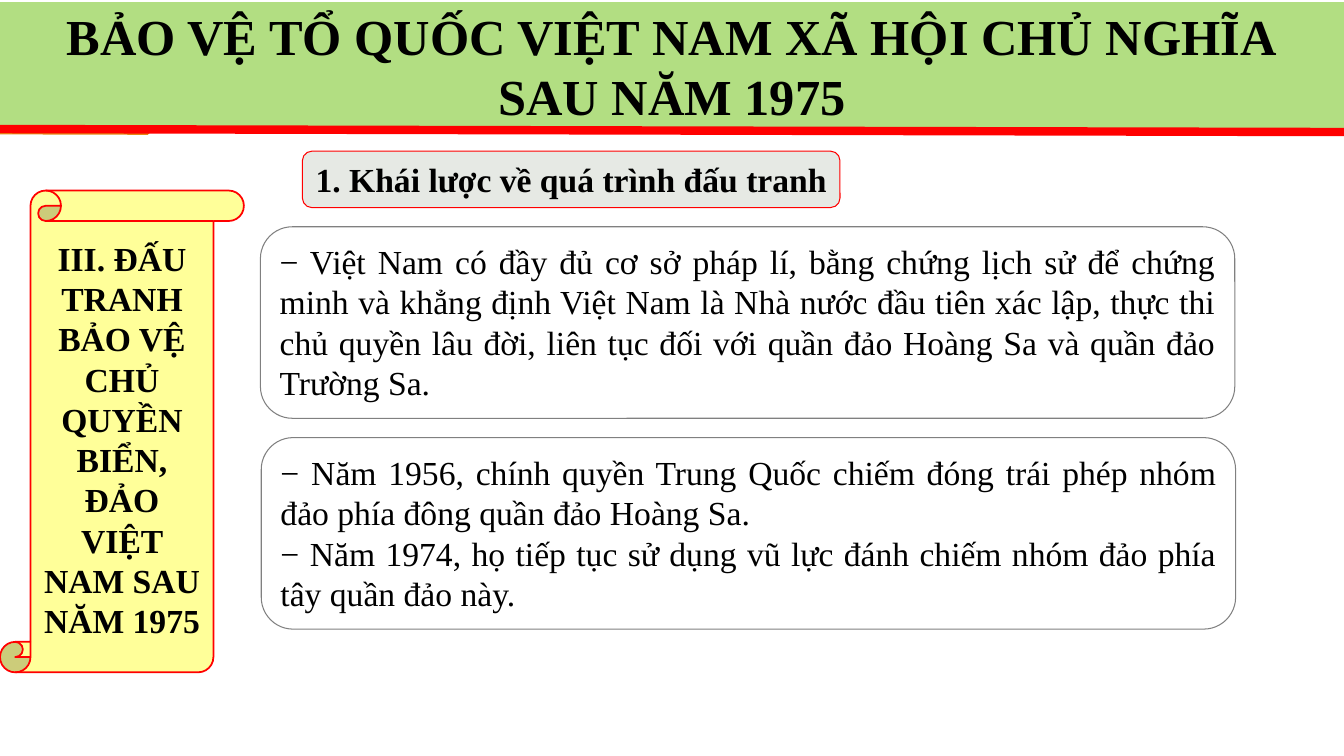
import pptx
import pptx.dml.color
import pptx.enum.shapes
import pptx.enum.text
import pptx.oxml
import pptx.oxml.ns
import pptx.util

RGBColor = pptx.dml.color.RGBColor
SHAPE = pptx.enum.shapes.MSO_SHAPE
ALIGN = pptx.enum.text.PP_ALIGN
ANCHOR = pptx.enum.text.MSO_ANCHOR
FIT = pptx.enum.text.MSO_AUTO_SIZE

BLACK = RGBColor(0x00, 0x00, 0x00)
RED = RGBColor(0xFF, 0x00, 0x00)
GREEN = RGBColor(0xB2, 0xDE, 0x82)
ORANGE = RGBColor(0xE7, 0x87, 0x12)
YELLOW = RGBColor(0xFF, 0xFF, 0x99)
PALE_GRAY = RGBColor(0xE6, 0xE9, 0xE4)
GRAY = RGBColor(0x80, 0x80, 0x80)

COLUMNS, ROWS = 160, 90


class LessonSlide:
    """Holds the slide, its grid and its text style."""

    font = "Times New Roman"

    def __init__(self, deck):
        self.slide = deck.slides.add_slide(deck.slide_layouts[5])
        self.shapes = self.slide.shapes
        self.column = deck.slide_width / COLUMNS
        self.row = deck.slide_height / ROWS

    def place(self, left, top, width, height):
        return (round(left * self.column), round(top * self.row),
                round(width * self.column), round(height * self.row))

    def set_text(self, part, lines, size, bold, align, anchor, fit=FIT.NONE):
        frame = part.text_frame
        frame.text = "\n".join(lines)
        frame.word_wrap = True
        frame.auto_size = fit
        frame.vertical_anchor = anchor
        for paragraph in frame.paragraphs:
            paragraph.alignment = align
            for run in paragraph.runs:
                run.font.name = self.font
                run.font.size = pptx.util.Pt(size)
                run.font.bold = bold
                run.font.color.rgb = BLACK

    def title(self, box, lines, fill):
        banner = self.shapes.title
        banner.left, banner.top, banner.width, banner.height = self.place(*box)
        banner.fill.solid()
        banner.fill.fore_color.rgb = fill
        self.set_text(banner, lines, 36, True, ALIGN.CENTER, ANCHOR.MIDDLE)

    def tag(self, corners, fill):
        """Draws an outline behind everything else."""
        points = [self.place(x, y, 0, 0)[:2] for x, y in corners]
        builder = self.shapes.build_freeform(*points[0])
        builder.add_line_segments(points[1:], close=True)
        tag = builder.convert_to_shape()
        tag.shadow.inherit = False
        tag.fill.solid()
        tag.fill.fore_color.rgb = fill
        tag.line.fill.background()
        self.shapes.title._element.addprevious(tag._element)

    def rule(self, start, end, color, weight):
        ends = self.place(*start, *end)
        rule = self.shapes.add_connector(
            pptx.enum.shapes.MSO_CONNECTOR.STRAIGHT, *ends)
        rule.line.color.rgb = color
        rule.line.width = pptx.util.Pt(weight)
        rule._element.spPr.append(pptx.oxml.parse_xml(
            f'<a:effectLst {pptx.oxml.ns.nsdecls("a")}/>'))

    def panel(self, kind, box, lines, line, weight=0.75, fill=None, bold=False,
              align=ALIGN.CENTER, anchor=ANCHOR.TOP, fit=FIT.SHAPE_TO_FIT_TEXT):
        panel = self.shapes.add_shape(kind, *self.place(*box))
        panel.shadow.inherit = False
        if fill is None:
            panel.fill.background()
        else:
            panel.fill.solid()
            panel.fill.fore_color.rgb = fill
        panel.line.color.rgb = line
        panel.line.width = pptx.util.Pt(weight)
        self.set_text(panel, lines, 24, bold, align, anchor, fit)


def main():
    deck = pptx.Presentation()
    deck.slide_width = pptx.util.Inches(13.33)
    deck.slide_height = pptx.util.Inches(7.5)
    lesson = LessonSlide(deck)

    # Title banner over the orange tag, with a red rule below
    lesson.title((0, 0.24, COLUMNS, 15.12),
                 ["BẢO VỆ TỔ QUỐC VIỆT NAM XÃ HỘI CHỦ NGHĨA", "SAU NĂM 1975"],
                 GREEN)
    lesson.tag([(0, 9.4), (17.6, 9.4), (20.85, 12.7), (17.6, 16.05), (0, 16)],
               ORANGE)
    lesson.rule((0, 15.36), (COLUMNS, 15.72), RED, 6)

    # Section heading
    lesson.panel(SHAPE.ROUNDED_RECTANGLE, (36, 18, 64, 6.72),
                 ["1. Khái lược về quá trình đấu tranh"],
                 RED, fill=PALE_GRAY, bold=True)

    # Chapter scroll
    lesson.panel(SHAPE.VERTICAL_SCROLL, (0, 22.68, 29.04, 57.36),
                 ["III. ĐẤU TRANH BẢO VỆ CHỦ QUYỀN BIỂN, ĐẢO VIỆT NAM "
                  "SAU NĂM 1975"],
                 RED, 1.25, YELLOW, bold=True, anchor=ANCHOR.MIDDLE,
                 fit=FIT.NONE)

    # Evidence and events
    statements = [
        ["− Việt Nam có đầy đủ cơ sở pháp lí, bằng chứng lịch sử để chứng "
         "minh và khẳng định Việt Nam là Nhà nước đầu tiên xác lập, thực thi "
         "chủ quyền lâu đời, liên tục đối với quần đảo Hoàng Sa và quần đảo "
         "Trường Sa."],
        ["− Năm 1956, chính quyền Trung Quốc chiếm đóng trái phép nhóm đảo "
         "phía đông quần đảo Hoàng Sa.",
         "− Năm 1974, họ tiếp tục sử dụng vũ lực đánh chiếm nhóm đảo phía "
         "tây quần đảo này."],
    ]
    for index, lines in enumerate(statements):
        lesson.panel(SHAPE.ROUNDED_RECTANGLE,
                     (31 + 0.1 * index, 27 + 25.1 * index, 116, 22.8),
                     lines, GRAY, align=ALIGN.JUSTIFY)

    deck.save("out.pptx")


if __name__ == "__main__":
    main()
